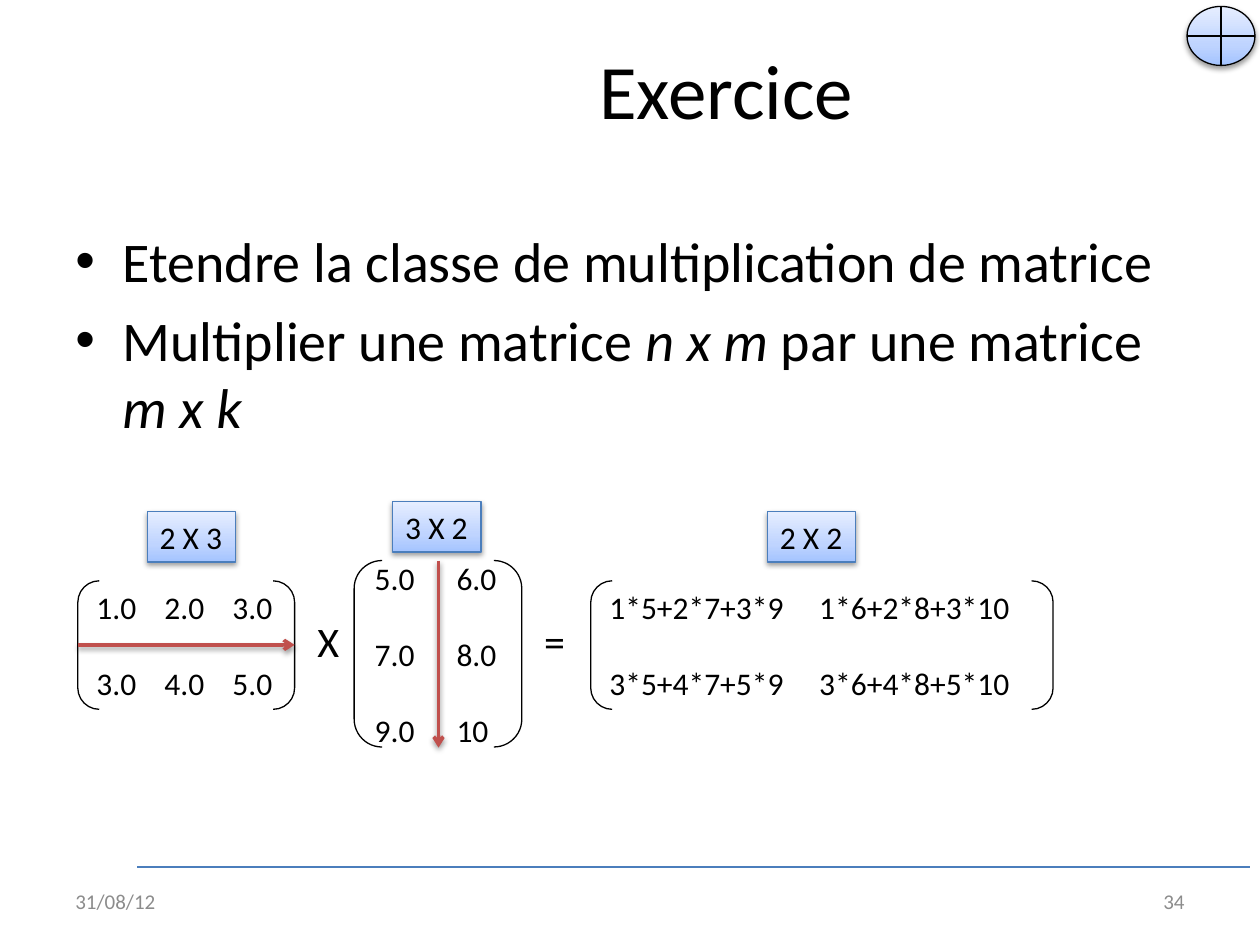
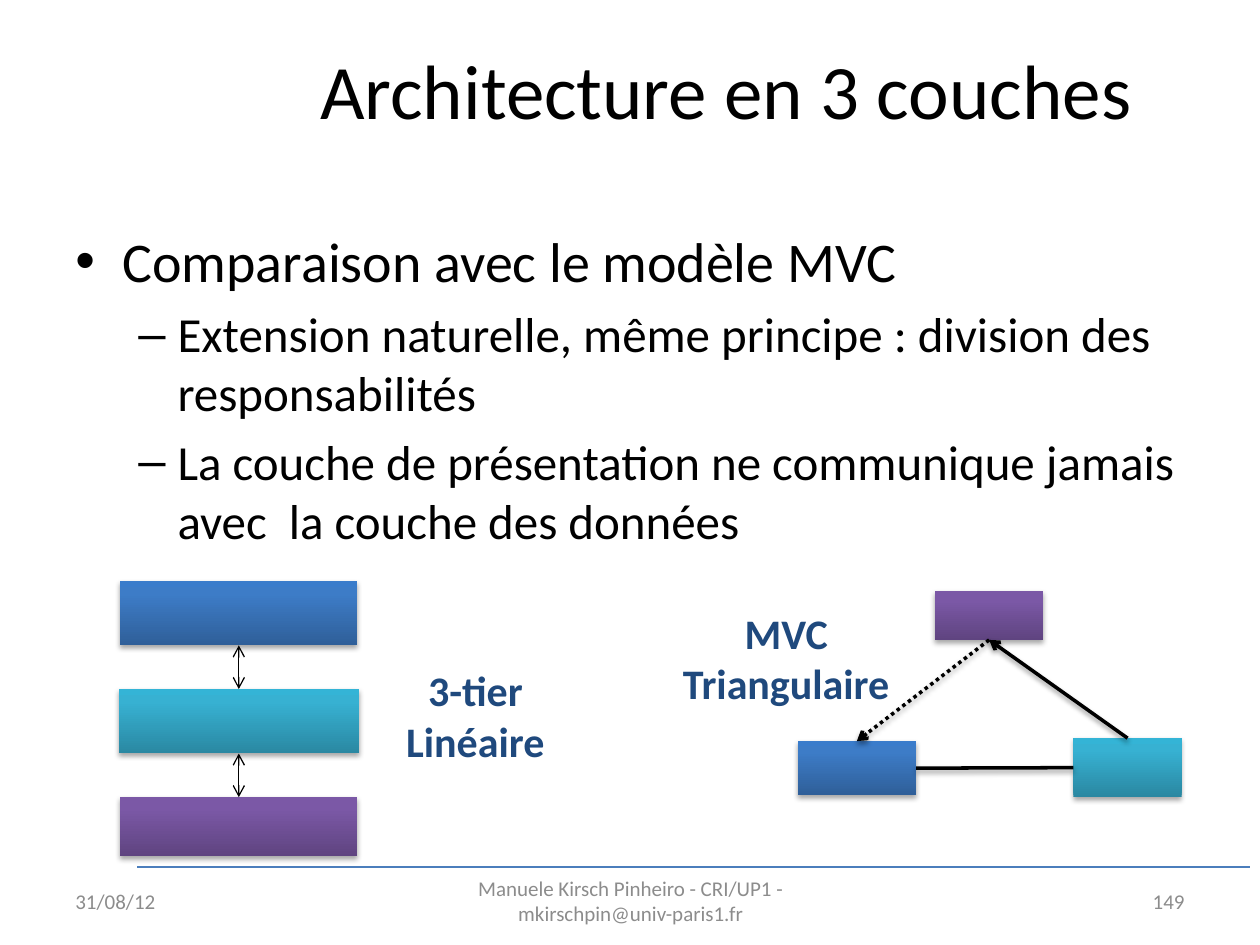
from dataclasses import dataclass

from lxml import etree
from pptx import Presentation
from pptx.dml.color import RGBColor
from pptx.enum.dml import MSO_LINE
from pptx.enum.shapes import MSO_CONNECTOR, MSO_SHAPE
from pptx.enum.text import MSO_ANCHOR, PP_ALIGN
from pptx.oxml.ns import qn
from pptx.util import Cm, Pt

LEFT, CENTER, RIGHT = PP_ALIGN.LEFT, PP_ALIGN.CENTER, PP_ALIGN.RIGHT
TOP, MIDDLE = MSO_ANCHOR.TOP, MSO_ANCHOR.MIDDLE
RECT, BRACKETS, CROSSED_DISC = MSO_SHAPE.RECTANGLE, MSO_SHAPE.DOUBLE_BRACKET, MSO_SHAPE.FLOWCHART_OR
STRAIGHT, DOTTED = MSO_CONNECTOR.STRAIGHT, MSO_LINE.ROUND_DOT
SITE_TOP, SITE_LEFT, SITE_BOTTOM, SITE_RIGHT = range(4)


@dataclass(frozen=True)
class Theme:
    font: str = "Calibri"
    ink: str = "000000"
    muted: str = "8C8C8C"
    label: str = "1F497D"
    rule: str = "4B7EBC"
    accent: str = "C0504D"
    pale: tuple = ((0, "A4C4FF"), (35, "BFD4FF"), (100, "E6EEFF"))
    blue: tuple = ((0, "2F5F99"), (80, "3D7CC7"), (100, "3A7CCB"))
    teal: tuple = ((0, "2A88A2"), (80, "37B1D2"), (100, "34B4D6"))
    purple: tuple = ((0, "5F4480"), (80, "7B58A6"), (100, "7C57A8"))
    title: int = 44
    body: tuple = (32, 28)
    sign: int = 24
    cell: int = 18
    footer: int = 12
    thin: float = 0.75
    thick: float = 2


T = Theme()
BULLETS = (("•", 0.95, -0.95), ("–", 2.06, -0.79))


def add_element(parent, tag, **attrs):
    child = etree.SubElement(parent, qn(tag))
    for name, value in attrs.items():
        child.set(name, str(value))
    return child


def add_shadow(effects, opacity=38, distance=1.6):
    shadow = add_element(effects, "a:outerShdw", blurRad=Pt(3.1), dist=Pt(distance),
                         dir=5400000, rotWithShape=0)
    color = add_element(shadow, "a:srgbClr", val=T.ink)
    add_element(color, "a:alpha", val=opacity * 1000)


def write(tf, paragraphs, size=T.cell, color=T.ink, bold=False, align=LEFT,
          anchor=TOP, wrap=True, gap=0, tab=None):
    tf.word_wrap = wrap
    tf.vertical_anchor = anchor
    for i, runs in enumerate(paragraphs):
        p = tf.paragraphs[0] if i == 0 else tf.add_paragraph()
        p.alignment = align
        p.space_before = Pt(gap if i else 0)
        if tab:
            tabs = add_element(p._p.get_or_add_pPr(), "a:tabLst")
            for n in range(1, runs.count("\t") + 1):
                add_element(tabs, "a:tab", pos=Cm(tab * n), algn="l")
        for text, italic in [(runs, False)] if isinstance(runs, str) else runs:
            r = p.add_run()
            r.text = text
            r.font.name, r.font.size = T.font, Pt(size)
            r.font.bold, r.font.italic = bold, italic
            r.font.color.rgb = RGBColor.from_string(color)


def text_box(s, box, paragraphs, **fmt):
    sp = s.shapes.add_textbox(*map(Cm, box))
    write(sp.text_frame, paragraphs, **fmt)
    return sp


def add_shape(s, kind, box, gradient=None, line=None, shadow=None):
    sp = s.shapes.add_shape(kind, *map(Cm, box))
    sp.fill.background()
    if line:
        sp.line.color.rgb = RGBColor.from_string(line)
        sp.line.width = Pt(T.thin)
    else:
        sp.line.fill.background()
    sp.shadow.inherit = False
    spPr = sp.element.spPr
    if gradient:
        old = spPr.find(qn("a:noFill"))
        fill = etree.Element(qn("a:gradFill"), rotWithShape="1")
        stops = add_element(fill, "a:gsLst")
        for position, color in gradient:
            stop = add_element(stops, "a:gs", pos=position * 1000)
            add_element(stop, "a:srgbClr", val=color)
        add_element(fill, "a:lin", ang=16200000, scaled=0)
        spPr.replace(old, fill)
    if shadow:
        add_shadow(spPr.find(qn("a:effectLst")), *shadow)
    return sp


def add_line(s, start=(0, 0), end=(0, 0), color=T.ink, width=T.thick, head=False,
             tail=False, dash=None, shadow=True, joins=None):
    cxn = s.shapes.add_connector(STRAIGHT, *map(Cm, (*start, *end)))
    if joins:
        source, source_site, target, target_site = joins
        cxn.begin_connect(source, source_site)
        cxn.end_connect(target, target_site)
    cxn.line.color.rgb = RGBColor.from_string(color)
    cxn.line.width = Pt(width)
    if dash:
        cxn.line.dash_style = dash
    spPr = cxn.element.spPr
    ln = spPr.find(qn("a:ln"))
    if head:
        add_element(ln, "a:headEnd", type="arrow")
    if tail:
        add_element(ln, "a:tailEnd", type="arrow")
    effects = add_element(spPr, "a:effectLst")
    if shadow:
        add_shadow(effects)


def base_slide(prs, title, number, credit=None):
    s = prs.slides.add_slide(prs.slide_layouts[6])
    add_line(s, (2.77, 17.48), (25.2, 17.48), T.rule, T.thin, shadow=False)
    text_box(s, (4.37, 0.2, 20.55, 3.18), [title], size=T.title, align=CENTER, anchor=MIDDLE)
    footers = ((1.27, 5.92, "31/08/12", LEFT), (8.69, 8.05, credit, CENTER),
               (18.21, 5.92, number, RIGHT))
    for x, w, text, align in footers:
        if text:
            text_box(s, (x, 17.65, w, 1.02), [text], size=T.footer, color=T.muted,
                     align=align, anchor=MIDDLE)
    return s


def bullet_list(s, box, items):
    tf = s.shapes.add_textbox(*map(Cm, box)).text_frame
    tf.word_wrap = True
    for i, (level, runs) in enumerate(items):
        char, margin, indent = BULLETS[level]
        p = tf.paragraphs[0] if i == 0 else tf.add_paragraph()
        pPr = p._p.get_or_add_pPr()
        pPr.set("marL", str(Cm(margin)))
        pPr.set("indent", str(Cm(indent)))
        add_element(pPr, "a:buFont", typeface="Arial")
        add_element(pPr, "a:buChar", char=char)
        p.level = level
        p.space_before = Pt(T.body[level] * 0.2 if i else 0)
        for text, italic in runs:
            r = p.add_run()
            r.text = text
            r.font.name, r.font.size, r.font.italic = T.font, Pt(T.body[level]), italic
            r.font.color.rgb = RGBColor.from_string(T.ink)


def matrix(s, box, rows, tab, size_label, label_at):
    sp = add_shape(s, BRACKETS, box, line=T.ink)
    write(sp.text_frame, ["\t".join(row) for row in rows], anchor=MIDDLE, gap=22, tab=tab)
    x, y = label_at
    tag = add_shape(s, RECT, (box[0] + x, box[1] + y, 1.78, 1.02), T.pale, T.rule, (38, 1.6))
    write(tag.text_frame, [size_label], wrap=False)


def matrix_product(s, left, top):
    matrix(s, (left, top + 1.6, 4.37, 2.59),
           [("1.0", "2.0", "3.0"), ("3.0", "4.0", "5.0")], 1.37, "2 X 3", (1.4, -1.4))
    matrix(s, (left + 5.57, top + 1.19, 3.38, 3.76),
           [("5.0", "6.0"), ("7.0", "8.0"), ("9.0", "10")], 1.65, "3 X 2", (0.78, -1.19))
    matrix(s, (left + 10.34, top + 1.6, 9.32, 2.59),
           [("1*5+2*7+3*9", "1*6+2*8+3*10"), ("3*5+4*7+5*9", "3*6+4*8+5*10")],
           4.23, "2 X 2", (3.56, -1.4))
    for x, sign in ((4.58, "X"), (9.15, "=")):
        text_box(s, (left + x, top + 2.18, 0.97, 1.3), [sign], size=T.sign, wrap=False)
    row_y, column_x = top + 2.89, left + 7.27
    add_line(s, (left, row_y), (left + 4.37, row_y), T.accent, tail=True)
    add_line(s, (column_x, top + 1.19), (column_x, top + 4.96), T.accent, tail=True)


def diagram_label(s, box, lines):
    text_box(s, box, lines, size=T.sign, color=T.label, bold=True, align=CENTER, wrap=False)


def block(s, box, gradient):
    return add_shape(s, RECT, box, gradient, shadow=(35, 1.8))


def tier_stack(s, left, top, width=4.85, pitch=2.18):
    layers = ((4.78, 1.3, T.blue), (4.85, 1.3, T.teal), (4.78, 1.19, T.purple))
    tiers = [block(s, (left + (width - w) / 2, top + i * pitch, w, h), gradient)
             for i, (w, h, gradient) in enumerate(layers)]
    for upper, lower in zip(tiers, tiers[1:]):
        add_line(s, width=T.thin, head=True, tail=True, shadow=False,
                 joins=(upper, SITE_BOTTOM, lower, SITE_TOP))
    diagram_label(s, (left + 5.43, top + 1.57, 3.53, 2.31), ["3-tier", "Linéaire"])


def mvc_triangle(s, left, top):
    apex = block(s, (left + 5.36, top + 0.2, 2.18, 0.99), T.purple)
    base_left = block(s, (left + 2.59, top + 3.23, 2.39, 1.09), T.blue)
    base_right = block(s, (left + 8.15, top + 3.17, 2.18, 1.19), T.teal)
    diagram_label(s, (left, top + 0.41, 4.72, 2.31), ["MVC", "Triangulaire"])
    add_line(s, joins=(base_left, SITE_RIGHT, base_right, SITE_LEFT))
    add_line(s, tail=True, joins=(base_right, SITE_TOP, apex, SITE_BOTTOM))
    add_line(s, tail=True, dash=DOTTED, joins=(apex, SITE_BOTTOM, base_left, SITE_TOP))


def exercise_slide(prs, body):
    s = base_slide(prs, "Exercice", "34")
    bullet_list(s, body, [
        (0, [("Etendre la classe de multiplication de matrice", False)]),
        (0, [("Multiplier une matrice ", False), ("n x m ", True),
             ("par une matrice ", False), ("m x k", True)]),
    ])
    matrix_product(s, 1.57, 10.11)
    add_shape(s, CROSSED_DISC, (23.93, 0.13, 1.37, 1.19), T.pale, T.ink, (38, 1.6))


def architecture_slide(prs, body):
    s = base_slide(prs, "Architecture en 3 couches", "149",
                   "Manuele Kirsch Pinheiro - CRI/UP1 - mkirschpin@univ-paris1.fr")
    bullet_list(s, body, [
        (0, [("Comparaison avec le modèle MVC", False)]),
        (1, [("Extension naturelle, même principe : division des responsabilités", False)]),
        (1, [("La couche de présentation ne communique jamais avec  la couche des données",
              False)]),
    ])
    tier_stack(s, 2.39, 11.71)
    mvc_triangle(s, 13.49, 11.71)


def main():
    prs = Presentation()
    prs.slide_width, prs.slide_height = Cm(25.4), Cm(19.05)
    body = (1.27, 4.45, 22.86, 12.57)
    exercise_slide(prs, body)
    architecture_slide(prs, body)
    prs.save("out.pptx")


if __name__ == "__main__":
    main()
